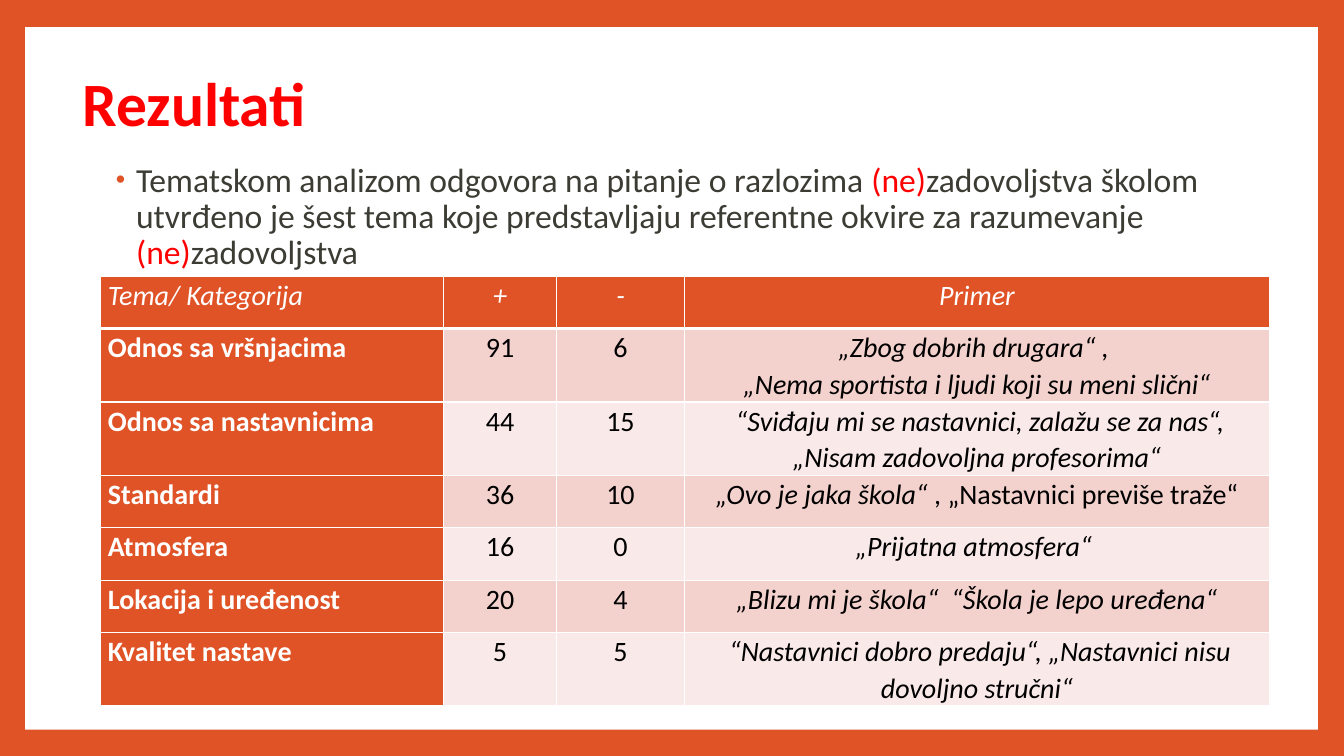
from dataclasses import dataclass

from lxml.etree import SubElement
from pptx import Presentation
from pptx.dml.color import RGBColor
from pptx.enum.shapes import MSO_SHAPE as Shape
from pptx.enum.text import MSO_ANCHOR as Anchor, MSO_AUTO_SIZE as AutoSize, PP_ALIGN as Align
from pptx.oxml.ns import qn
from pptx.util import Inches, Pt

FONT = "Calibri"
ORANGE = RGBColor(0xDF, 0x53, 0x27)
WHITE = RGBColor(0xFF, 0xFF, 0xFF)
BLACK = RGBColor(0x00, 0x00, 0x00)
RED = RGBColor(0xFF, 0x00, 0x00)
CHARCOAL = RGBColor(0x3C, 0x3C, 0x34)
BANDS = (RGBColor(0xF3, 0xD1, 0xCD), RGBColor(0xF9, 0xE9, 0xE8))

COLUMN_WIDTHS = (3.4, 1.12, 1.27, 5.8)
ROW_HEIGHT = 0.52


@dataclass(frozen=True)
class Piece:
    text: str
    color: RGBColor = BLACK
    size: float = 20
    bold: bool = False
    italic: bool = False


@dataclass(frozen=True)
class Theme:
    name: str
    positive: int
    negative: int
    examples: tuple[str, ...]
    upright_ending: str = ""


INTRO = (
    Piece("Tematskom analizom odgovora na pitanje o razlozima ", CHARCOAL, 24),
    Piece("(ne)", RED, 24),
    Piece("zadovoljstva školom utvrđeno je šest tema koje predstavljaju "
          "referentne okvire za razumevanje ", CHARCOAL, 24),
    Piece("(ne)", RED, 24),
    Piece("zadovoljstva", CHARCOAL, 24),
)
HEADINGS = ("Tema/ Kategorija", "+", "-", "Primer")
THEMES = (
    Theme("Odnos sa vršnjacima", 91, 6,
          ("„Zbog dobrih drugara“ , ", "„Nema sportista i ljudi koji su meni slični“")),
    Theme("Odnos sa nastavnicima", 44, 15,
          (" “Sviđaju mi se nastavnici, zalažu se za nas“, „Nisam zadovoljna profesorima“",)),
    Theme("Standardi", 36, 10, ("„Ovo je jaka škola“ ",), ", „Nastavnici previše traže“"),
    Theme("Atmosfera", 16, 0, ("„Prijatna atmosfera“ ",)),
    Theme("Lokacija i uređenost", 20, 4, ("„Blizu mi je škola“  “Škola je lepo uređena“",)),
    Theme("Kvalitet nastave", 5, 5,
          (" “Nastavnici dobro predaju“, „Nastavnici nisu dovoljno stručni“",)),
)


def place(shape, left: float, top: float, width: float, height: float) -> None:
    shape.left, shape.top = Inches(left), Inches(top)
    shape.width, shape.height = Inches(width), Inches(height)


def write(paragraph, pieces, align: Align, spacing: float) -> None:
    paragraph.alignment = align
    paragraph.line_spacing = spacing
    paragraph.space_before = Pt(0)
    for piece in pieces:
        run = paragraph.add_run()
        run.text = piece.text
        run.font.name = FONT
        run.font.size = Pt(piece.size)
        run.font.bold = piece.bold
        run.font.italic = piece.italic
        run.font.color.rgb = piece.color


def add_bullet(paragraph, color: RGBColor) -> None:
    properties = paragraph._p.get_or_add_pPr()
    properties.set("marL", str(Inches(0.25)))
    properties.set("indent", str(Inches(-0.2)))
    bullet_color = SubElement(properties, qn("a:buClr"))
    SubElement(bullet_color, qn("a:srgbClr"), val=str(color))
    SubElement(properties, qn("a:buSzPct"), val="80000")
    SubElement(properties, qn("a:buFont"), typeface="Arial")
    SubElement(properties, qn("a:buChar"), char="•")


def set_borders(cell, top: float, bottom: float) -> None:
    properties = cell._tc.get_or_add_tcPr()
    for side, width in (("L", 1), ("R", 1), ("T", top), ("B", bottom)):
        line = SubElement(properties, qn(f"a:ln{side}"), w=str(Pt(width)))
        fill = SubElement(line, qn("a:solidFill"))
        SubElement(fill, qn("a:srgbClr"), val=str(WHITE))


def fill_cell(table, row: int, column: int, fill: RGBColor, paragraphs) -> None:
    cell = table.cell(row, column)
    cell.margin_left = cell.margin_right = Inches(0.07)
    cell.margin_top = cell.margin_bottom = 0
    set_borders(cell, 3 if row == 1 else 1, 3 if row == 0 else 1)
    cell.fill.solid()
    cell.fill.fore_color.rgb = fill
    frame = cell.text_frame
    align = Align.JUSTIFY if column == 0 else Align.CENTER
    for index, pieces in enumerate(paragraphs):
        paragraph = frame.add_paragraph() if index else frame.paragraphs[0]
        write(paragraph, pieces, align, 1.07)


def add_background(slide) -> None:
    slide.background.fill.solid()
    slide.background.fill.fore_color.rgb = ORANGE
    panel = slide.shapes.add_shape(
        Shape.RECTANGLE, Inches(0.25), Inches(0.27), Inches(12.82), Inches(6.97))
    panel.shadow.inherit = False
    panel.fill.solid()
    panel.fill.fore_color.rgb = WHITE
    panel.line.fill.background()
    slide.shapes._spTree.insert(2, panel._element)


def add_title(slide) -> None:
    title = slide.shapes.title
    place(title, 0.72, 0.6, 10.8, 0.91)
    title.text_frame.auto_size = AutoSize.NONE
    title.text_frame.vertical_anchor = Anchor.MIDDLE
    write(title.text_frame.paragraphs[0],
          [Piece("Rezultati", RED, 44, bold=True)], Align.LEFT, 0.9)


def add_intro(slide) -> None:
    body = slide.placeholders[1]
    place(body, 1, 1.57, 11.4, 5.09)
    body.text_frame.auto_size = AutoSize.NONE
    body.text_frame.vertical_anchor = Anchor.TOP
    paragraph = body.text_frame.paragraphs[0]
    add_bullet(paragraph, ORANGE)
    write(paragraph, INTRO, Align.LEFT, 0.9)


def add_themes(slide) -> None:
    row_count = len(THEMES) + 1
    table = slide.shapes.add_table(
        row_count, len(COLUMN_WIDTHS), Inches(1), Inches(2.74),
        Inches(sum(COLUMN_WIDTHS)), Inches(ROW_HEIGHT * row_count)).table
    table.horz_banding = False
    for column, width in zip(table.columns, COLUMN_WIDTHS):
        column.width = Inches(width)
    for row in table.rows:
        row.height = Inches(ROW_HEIGHT)
    for column, heading in enumerate(HEADINGS):
        fill_cell(table, 0, column, ORANGE, [[Piece(heading, WHITE, italic=True)]])
    for row, theme in enumerate(THEMES, start=1):
        band = BANDS[(row - 1) % 2]
        examples = [[Piece(example, italic=True)] for example in theme.examples]
        if theme.upright_ending:
            examples[-1].append(Piece(theme.upright_ending))
        fill_cell(table, row, 0, ORANGE, [[Piece(theme.name, WHITE, bold=True)]])
        fill_cell(table, row, 1, band, [[Piece(str(theme.positive))]])
        fill_cell(table, row, 2, band, [[Piece(str(theme.negative))]])
        fill_cell(table, row, 3, band, examples)


def main() -> None:
    presentation = Presentation()
    presentation.slide_width = Inches(13.33)
    presentation.slide_height = Inches(7.5)
    slide = presentation.slides.add_slide(presentation.slide_layouts[1])
    add_background(slide)
    add_title(slide)
    add_intro(slide)
    add_themes(slide)
    presentation.save("out.pptx")


if __name__ == "__main__":
    main()
